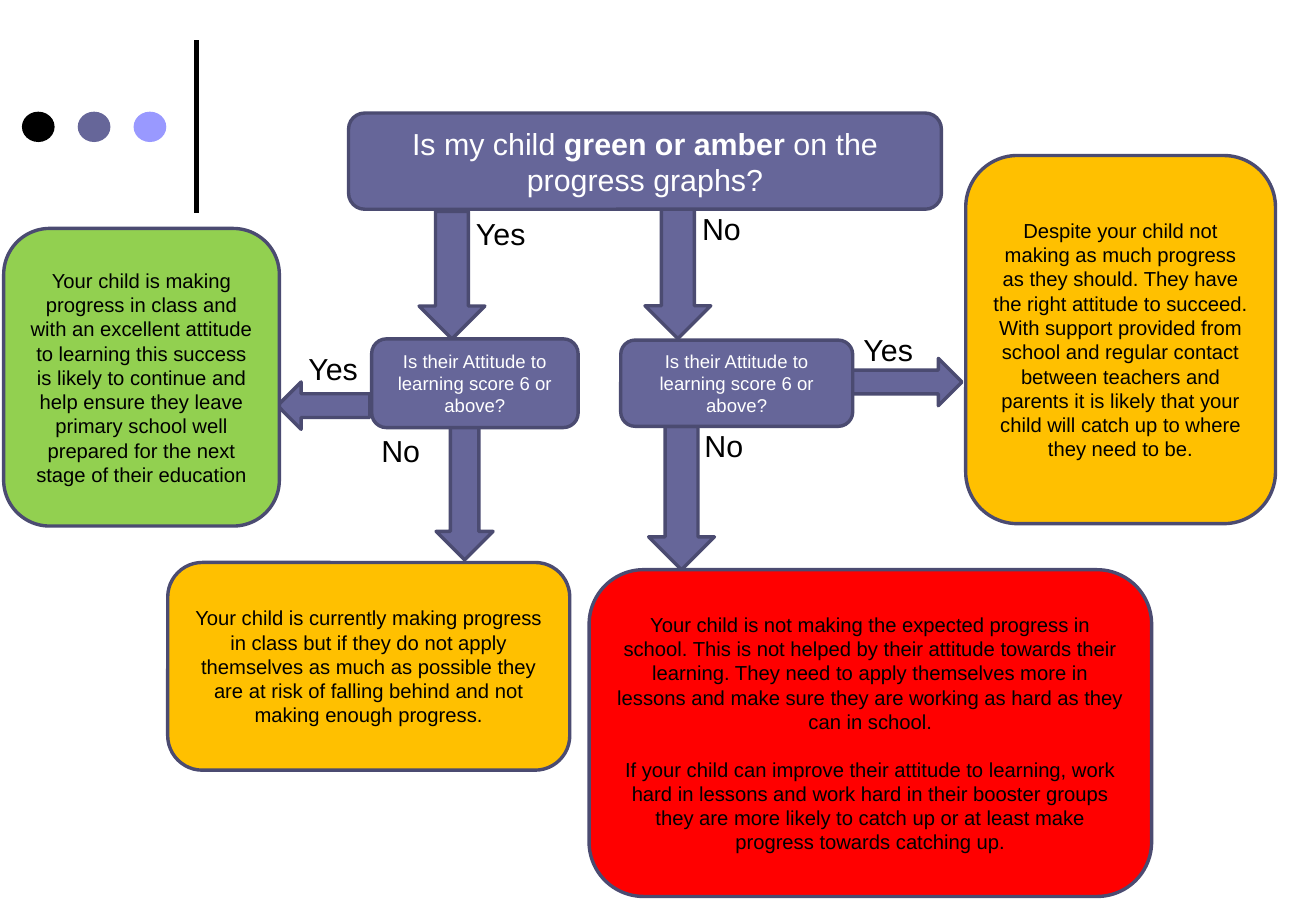
from dataclasses import dataclass

from lxml import etree
from pptx import Presentation
from pptx.dml.color import RGBColor
from pptx.enum.shapes import MSO_CONNECTOR, MSO_SHAPE as SHAPE
from pptx.enum.text import MSO_ANCHOR, PP_ALIGN
from pptx.oxml.ns import qn
from pptx.util import Pt


@dataclass(frozen=True)
class Theme:
    font: str = "Arial"
    black: str = "000000"
    white: str = "FFFFFF"
    slate: str = "666699"
    lilac: str = "9999FF"
    outline: str = "4B4B71"
    green: str = "92D050"
    amber: str = "FFC000"
    red: str = "FF0000"
    large: float = 18
    medium: float = 12
    small: float = 11
    border: float = 2
    rule: float = 3


THEME = Theme()


def rgb(value):
    return RGBColor.from_string(value)


def add_filled(slide, kind, box, fill, outline=None):
    sp = slide.shapes.add_shape(kind, *map(Pt, box))
    sp.shadow.inherit = False
    sp.fill.solid()
    sp.fill.fore_color.rgb = rgb(fill)
    if outline:
        sp.line.color.rgb = rgb(outline)
        sp.line.width = Pt(THEME.border)
    else:
        sp.line.fill.background()
    return sp


def style_paragraph(p, size, color, align):
    p.alignment = align
    p.font.name = THEME.font
    p.font.size = Pt(size)
    p.font.color.rgb = rgb(color)


def add_box(slide, box, paragraphs, fill, size=THEME.medium, color=THEME.black):
    """Add a rounded box; each paragraph is a list of (text, bold) runs."""
    tf = add_filled(slide, SHAPE.ROUNDED_RECTANGLE, box, fill, THEME.outline).text_frame
    tf.word_wrap = True
    tf.vertical_anchor = MSO_ANCHOR.MIDDLE
    for i, runs in enumerate(paragraphs):
        p = tf.add_paragraph() if i else tf.paragraphs[0]
        style_paragraph(p, size, color, PP_ALIGN.CENTER)
        if i:
            p.space_before = Pt(13.8)
        for text, bold in runs:
            r = p.add_run()
            r.text = text
            if bold:
                r.font.bold = True


def add_label(slide, left, top, text):
    tf = slide.shapes.add_textbox(Pt(left), Pt(top), Pt(109.4), Pt(29)).text_frame
    tf.word_wrap = True
    p = tf.paragraphs[0]
    p.text = text
    style_paragraph(p, THEME.large, THEME.black, PP_ALIGN.LEFT)


def add_ornament(slide):
    """Add the vertical rule and the row of dots in the corner."""
    rule = slide.shapes.add_connector(
        MSO_CONNECTOR.STRAIGHT, Pt(116.6), Pt(126), Pt(116.6), Pt(23.8))
    rule.line.color.rgb = rgb(THEME.black)
    rule.line.width = Pt(THEME.rule)
    etree.SubElement(rule._element.spPr, qn("a:effectLst"))
    for i, color in enumerate((THEME.black, THEME.slate, THEME.lilac)):
        add_filled(slide, SHAPE.OVAL, (13 + 33.1 * i, 66.2, 19.4, 18), color)


ARROWS = [
    (SHAPE.DOWN_ARROW, (248.4, 125.3, 39, 75.6)),
    (SHAPE.DOWN_ARROW, (382.3, 123.8, 39, 77)),
    (SHAPE.DOWN_ARROW, (258.5, 252.7, 33.8, 79.2)),
    (SHAPE.DOWN_ARROW, (384.5, 252.7, 39, 85)),
    (SHAPE.LEFT_ARROW, (164.5, 226.4, 54.7, 28.1)),
    (SHAPE.RIGHT_ARROW, (504.7, 212.4, 65.5, 28.1)),
]

LABELS = [
    (275, 123.8, "Yes"), (409, 121.2, "No"),
    (175.7, 203.8, "Yes"), (218.9, 252.7, "No"),
    (504.7, 193, "Yes"), (410.4, 249.8, "No"),
]

QUESTION = [("Is my child ", False), ("green or amber ", True),
            ("on the progress graphs?", False)]
ATTITUDE = [("Is their Attitude to learning score 6 or above?", False)]
ATTITUDE_BOXES = [(220.3, 200.9, 122.4, 52.6), (367.9, 201.6, 137.5, 51.1)]

OUTCOMES = [
    ((2.2, 135.4, 163.4, 176.4), THEME.green, [
        "Your child is making progress in class and with an excellent attitude to "
        "learning this success is likely to continue and help ensure they leave "
        "primary school well prepared for the next stage of their education"]),
    ((99.4, 333.4, 238.3, 123.1), THEME.amber, [
        "Your child is currently making progress in class but if they do not apply "
        "themselves as much as possible they are at risk of falling behind and not "
        "making enough progress."]),
    ((349.2, 337.7, 333.4, 193.7), THEME.red, [
        "Your child is not making the expected progress in school. This is not helped "
        "by their attitude towards their learning. They need to apply themselves more "
        "in lessons and make sure they are working as hard as they can in school.",
        "If your child can improve their attitude to learning, work hard in lessons and "
        "work hard in their booster groups they are more likely to catch up or at least "
        "make progress towards catching up."]),
    ((572.4, 92.2, 183.6, 218.2), THEME.amber, [
        "Despite your child not making as much progress as they should. They have the "
        "right attitude to succeed. With support provided from school and regular "
        "contact between teachers and parents it is likely that your child will catch "
        "up to where they need to be."]),
]


def main():
    prs = Presentation()
    prs.slide_width, prs.slide_height = Pt(780), Pt(540)
    slide = prs.slides.add_slide(prs.slide_layouts.get_by_name("Blank"))
    add_ornament(slide)
    for kind, box in ARROWS:
        add_filled(slide, kind, box, THEME.slate, THEME.outline)
    add_box(slide, (206.6, 67, 351.4, 57), [QUESTION], THEME.slate,
            THEME.large, THEME.white)
    for box in ATTITUDE_BOXES:
        add_box(slide, box, [ATTITUDE], THEME.slate, THEME.small, THEME.white)
    for box, fill, texts in OUTCOMES:
        add_box(slide, box, [[(text, False)] for text in texts], fill)
    for left, top, text in LABELS:
        add_label(slide, left, top, text)
    prs.save("out.pptx")


if __name__ == "__main__":
    main()
